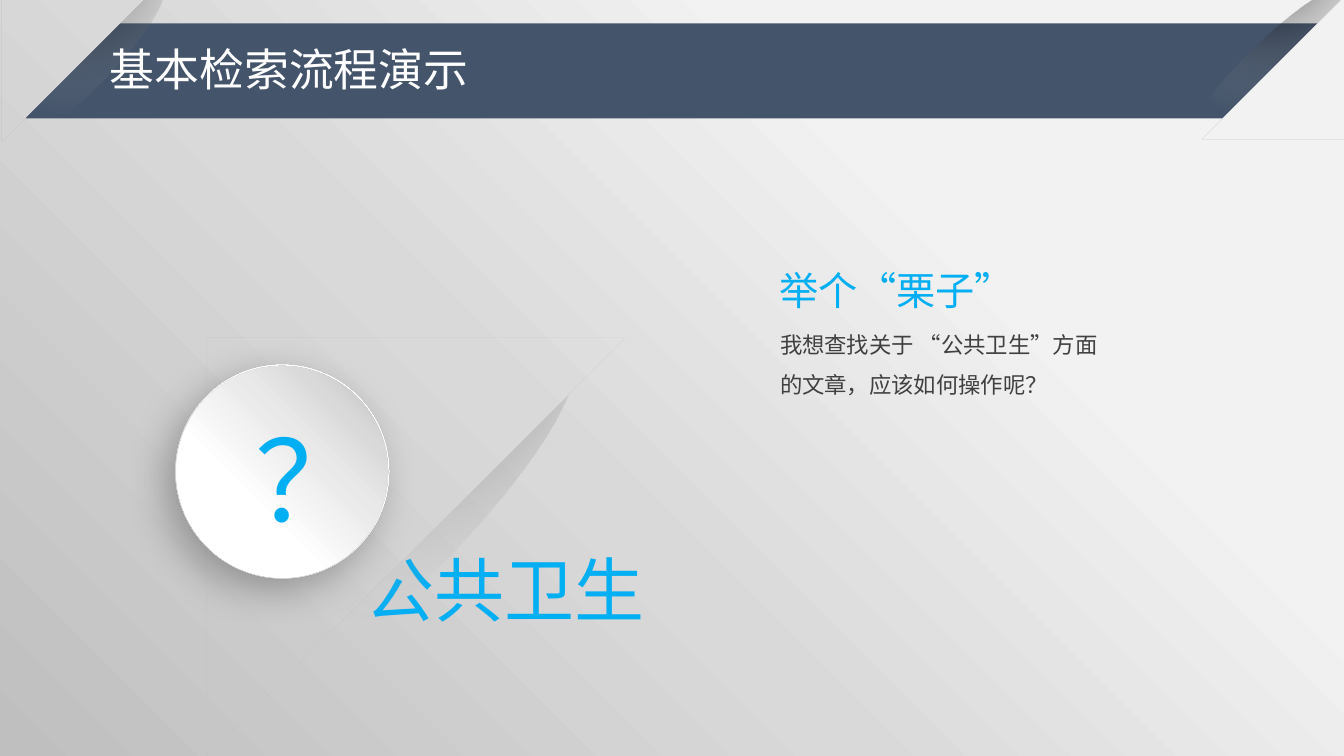
"""Build the slide that introduces the basic search walkthrough."""
from lxml import etree
from pptx import Presentation
from pptx.dml.color import RGBColor
from pptx.enum import shapes, text
from pptx.oxml import ns
from pptx.util import Pt

NAVY = RGBColor(0x44, 0x54, 0x6A)
BLUE = RGBColor(0x02, 0xAF, 0xF3)
GREY = RGBColor(0x40, 0x40, 0x40)
WHITE = RGBColor(0xFF, 0xFF, 0xFF)
FONT = "Noto Sans CJK SC"

TOP_RIGHT, BOTTOM_LEFT = (100, 0, 0, 100), (0, 100, 100, 0)
BACKDROP = [(9, "F2F2F2", 100), (29, "F2F2F2", 100), (59, "D9D9D9", 100), (100, "BFBFBF", 100)]
SHADE = [(0, "404040", 40), (32, "000000", 30), (100, "E7E6E6", 0)]
RIM = [(0, "FFFFFF", 100), (35, "FFFFFF", 100), (100, "BFBFBF", 100)]
FACE = [(0, "FFFFFF", 100), (35, "FFFFFF", 100), (63, "E9E9E9", 100),
        (79, "D9D9D9", 100), (95, "BFBFBF", 100)]


def set_gradient(fill, props, stops, focus):
    fill.solid()
    solid = props.find(ns.qn("a:solidFill"))
    grad = etree.Element(ns.qn("a:gradFill"), rotWithShape="1")
    stop_list = etree.SubElement(grad, ns.qn("a:gsLst"))
    for pos, color, alpha in stops:
        gs = etree.SubElement(stop_list, ns.qn("a:gs"), pos=str(pos * 1000))
        clr = etree.SubElement(gs, ns.qn("a:srgbClr"), val=color)
        if alpha < 100:
            etree.SubElement(clr, ns.qn("a:alpha"), val=str(alpha * 1000))
    radial = etree.SubElement(grad, ns.qn("a:path"), path="circle")
    sides = {side: str(v * 1000) for side, v in zip("ltrb", focus)}
    etree.SubElement(radial, ns.qn("a:fillToRect"), **sides)
    props.replace(solid, grad)


def add_plain(parent, kind, left, top, width, height, rotation=0):
    sp = parent.shapes.add_shape(kind, Pt(left), Pt(top), Pt(width), Pt(height))
    sp.rotation = rotation
    sp.line.fill.background()
    sp.shadow.inherit = False
    return sp


prs = Presentation()
prs.slide_width, prs.slide_height = Pt(960), Pt(540)
s = prs.slides.add_slide(prs.slide_layouts[5])
bg_fill = s.background.fill
bg_fill.solid()
set_gradient(bg_fill, s._element.find(".//" + ns.qn("p:bgPr")), BACKDROP, TOP_RIGHT)

OVAL = shapes.MSO_SHAPE.OVAL
banner = add_plain(s, shapes.MSO_SHAPE.RECTANGLE, 18.7, 16.6, 941.3, 68)
banner.fill.solid()
banner.fill.fore_color.rgb = NAVY

folds = [
    ((-36.7, 28.1, 177.8, 42.5, 315.5), (1.4, 0, 100.8, 100.8, 90)),
    ((820.1, 29.5, 177.8, 42.5, 135.5), (859, -1.4, 100.8, 100.8, 270)),
    ((95, 337, 364.3, 86.4, 315.5), (147.6, 241.2, 298.8, 298.8, 90)),
]
labels = [
    ("公共卫生", 253.4, 386.6, 216.7, 67.7, 50, BLUE, False, 1),
    ("举个“栗子”", 549.4, 186.5, 185, 41, 28, BLUE, True, 1),
    ("我想查找关于 “公共卫生”方面的文章，应该如何操作呢？", 550.1, 223.2, 249.8, 65.5, 16, GREY, True, 1.5),
    ("基本检索流程演示", 71.3, 25.9, 272.9, 46.1, 32, WHITE, False, 1),
    ("？", 175.7, 289.4, 95, 104.4, 80, BLUE, False, 1),
]
title = s.shapes.title
for words, left, top, width, height, size, color, wrap, spacing in labels:
    if color == WHITE:
        sp = title
        s.shapes._spTree.append(sp._element)
        sp.left, sp.top, sp.width, sp.height = Pt(left), Pt(top), Pt(width), Pt(height)
    else:
        sp = s.shapes.add_textbox(Pt(left), Pt(top), Pt(width), Pt(height))
    tf = sp.text_frame
    tf.word_wrap = wrap
    tf.auto_size = text.MSO_AUTO_SIZE.SHAPE_TO_FIT_TEXT
    tf.vertical_anchor = text.MSO_ANCHOR.TOP
    p = tf.paragraphs[0]
    p.alignment = text.PP_ALIGN.LEFT
    p.line_spacing = spacing
    r = p.add_run()
    r.text = words
    r.font.size = Pt(size)
    r.font.color.rgb = color
    r.font.name = FONT
    etree.SubElement(r.font._element, ns.qn("a:ea"), typeface=FONT)

    if words != "公共卫生":
        continue
    for shade_box, flap_box in folds:
        fold = s.shapes.add_group_shape()
        shade = add_plain(fold, OVAL, *shade_box)
        set_gradient(shade.fill, shade._element.spPr, SHADE, (50, -80, 50, 180))
        flap = add_plain(fold, shapes.MSO_SHAPE.RIGHT_TRIANGLE, *flap_box)
        flap._element.set("useBgFill", "1")
    button = s.shapes.add_group_shape()
    rim = add_plain(button, OVAL, 125.3, 260.6, 152.6, 152.6)
    set_gradient(rim.fill, rim._element.spPr, RIM, TOP_RIGHT)
    effects = rim._element.spPr.find(ns.qn("a:effectLst"))
    drop = etree.SubElement(effects, ns.qn("a:outerShdw"), blurRad=str(Pt(29)),
                            dist=str(Pt(11)), dir=str(133 * 60000), rotWithShape="0")
    black = etree.SubElement(drop, ns.qn("a:srgbClr"), val="000000")
    etree.SubElement(black, ns.qn("a:alpha"), val="27000")
    face = add_plain(button, OVAL, 126, 261.4, 151.2, 151.2)
    set_gradient(face.fill, face._element.spPr, FACE, BOTTOM_LEFT)

prs.save("out.pptx")
